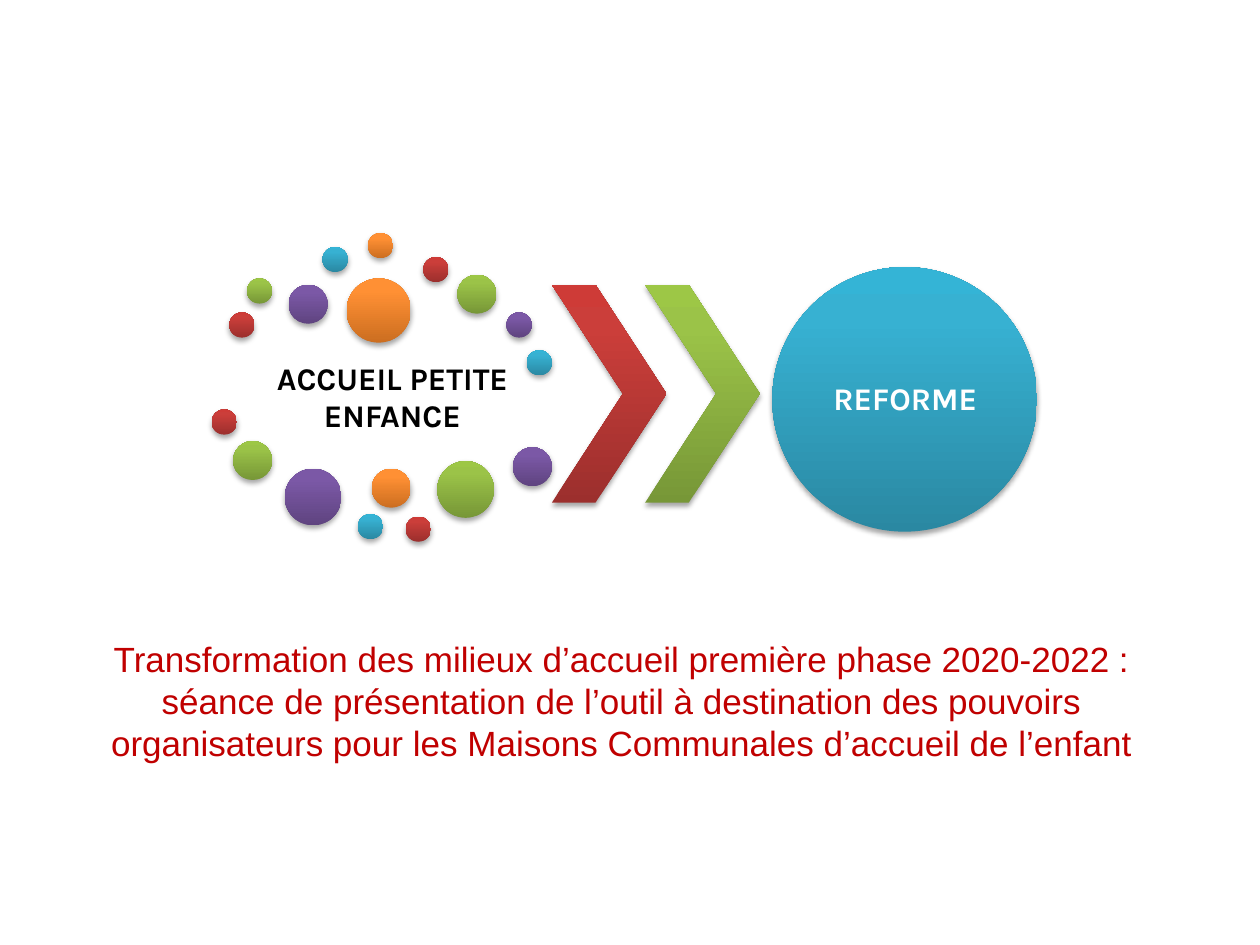
"""Build a slide showing early-childhood care moving towards its reform."""

from copy import deepcopy
from dataclasses import dataclass
from typing import NamedTuple

from pptx import Presentation
from pptx.dml.color import RGBColor
from pptx.enum.shapes import MSO_SHAPE
from pptx.enum.text import MSO_ANCHOR, PP_ALIGN
from pptx.oxml import parse_xml
from pptx.oxml.ns import nsdecls
from pptx.shapes.autoshape import Shape
from pptx.shapes.shapetree import GroupShapes
from pptx.text.text import _Paragraph
from pptx.util import Inches, Pt


class Ramp(NamedTuple):
    """Colours from the bottom to the top of a shape."""

    low: str
    mid: str
    high: str


class Box(NamedTuple):
    """A place on the slide, in inches."""

    left: float
    top: float
    width: float
    height: float


class Dot(NamedTuple):
    """A round bead: left, top and size in inches, and its colours."""

    left: float
    top: float
    size: float
    ramp: Ramp


class Label(NamedTuple):
    """A bold caption in the diagram."""

    text: str
    box: Box
    color: str
    inset: float
    pitch: float


@dataclass(frozen=True)
class Theme:
    """Colours, fonts and type sizes of the slide."""

    red: Ramp = Ramp("9C2F2D", "CB3E3A", "CE3B37")
    green: Ramp = Ramp("779737", "9BC348", "9DC746")
    purple: Ramp = Ramp("5F4480", "7B58A6", "7C57A8")
    blue: Ramp = Ramp("2A88A2", "37B1D2", "34B4D6")
    orange: Ramp = Ramp("CC6E20", "FF9034", "FF9136")
    black: str = "000000"
    white: str = "FFFFFF"
    accent: str = "C00000"
    head_font: str = "Karla"
    body_font: str = "Arial"
    head_size: int = 18
    body_size: int = 20


THEME = Theme()
SMALL, MEDIUM, LARGE, HUGE = 0.2, 0.31, 0.45, 0.51

DOTS = [
    Dot(1.82, 2.48, SMALL, THEME.red),
    Dot(1.96, 2.21, SMALL, THEME.green),
    Dot(2.29, 2.26, MEDIUM, THEME.purple),
    Dot(2.56, 1.96, SMALL, THEME.blue),
    Dot(2.92, 1.85, SMALL, THEME.orange),
    Dot(3.36, 2.04, SMALL, THEME.red),
    Dot(3.63, 2.18, MEDIUM, THEME.green),
    Dot(4.02, 2.48, SMALL, THEME.purple),
    Dot(4.18, 2.78, SMALL, THEME.blue),
    Dot(2.75, 2.21, HUGE, THEME.orange),
    Dot(1.68, 3.25, SMALL, THEME.red),
    Dot(1.85, 3.5, MEDIUM, THEME.green),
    Dot(2.26, 3.72, LARGE, THEME.purple),
    Dot(2.84, 4.08, SMALL, THEME.blue),
    Dot(2.95, 3.72, MEDIUM, THEME.orange),
    Dot(3.22, 4.1, SMALL, THEME.red),
    Dot(3.47, 3.66, LARGE, THEME.green),
    Dot(4.07, 3.55, MEDIUM, THEME.purple),
]
GOAL = Dot(6.13, 2.12, 2.1, THEME.blue)

START_LABEL = Label("ACCUEIL PETITE ENFANCE", Box(1.88, 2.74, 2.47, 0.81),
                    THEME.black, 0.03, 1.0)
GOAL_LABEL = Label("REFORME", Box(6.44, 2.43, 1.49, 1.49),
                   THEME.white, 0, 0.9)

CAPTION = (
    "Transformation des milieux d’accueil première phase 2020-2022 : "
    "séance de présentation de l’outil à destination des pouvoirs "
    "organisateurs pour les Maisons Communales d’accueil de l’enfant"
)


def style(para: _Paragraph, font: str, size: int, color: str, bold: bool) -> None:
    """Centre a paragraph and set its font."""
    para.alignment = PP_ALIGN.CENTER
    para.font.name = font
    para.font.size = Pt(size)
    para.font.bold = bold
    para.font.color.rgb = RGBColor.from_string(color)


def paint(shape: Shape, ramp: Ramp) -> None:
    """Give a shape an upward gradient, no outline and a soft shadow."""
    shape.line.fill.background()
    fill = shape.fill
    fill.gradient()
    fill.gradient_angle = 90
    stops = fill._fill._gradFill.gsLst
    stops.append(deepcopy(stops[-1]))
    for stop, color, spot in zip(fill.gradient_stops, ramp, (0, 0.8, 1)):
        stop.color.rgb = RGBColor.from_string(color)
        stop.position = spot
    shape.shadow.inherit = False
    shape._element.spPr.effectLst.append(parse_xml(
        f'<a:outerShdw {nsdecls("a")} blurRad="{Pt(3.1)}" dist="{Pt(1.8)}" '
        'dir="5400000" rotWithShape="0"><a:srgbClr val="000000">'
        '<a:alpha val="35000"/></a:srgbClr></a:outerShdw>'
    ))


def draw(shapes: GroupShapes, kind: MSO_SHAPE, box: Box, ramp: Ramp) -> Shape:
    """Add a painted preset shape."""
    shape = shapes.add_shape(kind, *map(Inches, box))
    paint(shape, ramp)
    return shape


def add_dot(shapes: GroupShapes, dot: Dot) -> None:
    """Add a round bead."""
    box = Box(dot.left, dot.top, dot.size, dot.size)
    draw(shapes, MSO_SHAPE.OVAL, box, dot.ramp)


def add_label(shapes: GroupShapes, label: Label) -> None:
    """Add a bold, centred caption."""
    frame = shapes.add_textbox(*map(Inches, label.box)).text_frame
    frame.word_wrap = True
    frame.vertical_anchor = MSO_ANCHOR.MIDDLE
    frame.margin_left = frame.margin_right = Inches(label.inset)
    frame.margin_top = frame.margin_bottom = Inches(label.inset)
    frame.text = label.text
    para = frame.paragraphs[0]
    para.line_spacing = label.pitch
    style(para, THEME.head_font, THEME.head_size, label.color, True)


def main() -> None:
    """Build and save the slide."""
    deck = Presentation()
    deck.slide_width, deck.slide_height = Inches(10), Inches(7.5)
    slide = deck.slides.add_slide(deck.slide_layouts[0])
    title = slide.shapes.title._element
    title.getparent().remove(title)

    note = slide.placeholders[1]
    note.left, note.top, note.width, note.height = map(
        Inches, Box(0.35, 5.01, 9.17, 1.18))
    note.text_frame.text = CAPTION
    para = note.text_frame.paragraphs[0]
    para.space_before = Pt(0)
    style(para, THEME.body_font, THEME.body_size, THEME.accent, False)

    shapes = slide.shapes.add_group_shape().shapes
    add_label(shapes, START_LABEL)
    for dot in DOTS:
        add_dot(shapes, dot)
    for step, ramp in enumerate((THEME.red, THEME.green)):
        box = Box(4.38 + 0.74 * step, 2.26, 0.91, 1.73)
        arrow = draw(shapes, MSO_SHAPE.CHEVRON, box, ramp)
        arrow.adjustments[0] = 0.62
    add_dot(shapes, GOAL)
    add_label(shapes, GOAL_LABEL)
    deck.save("out.pptx")


if __name__ == "__main__":
    main()
